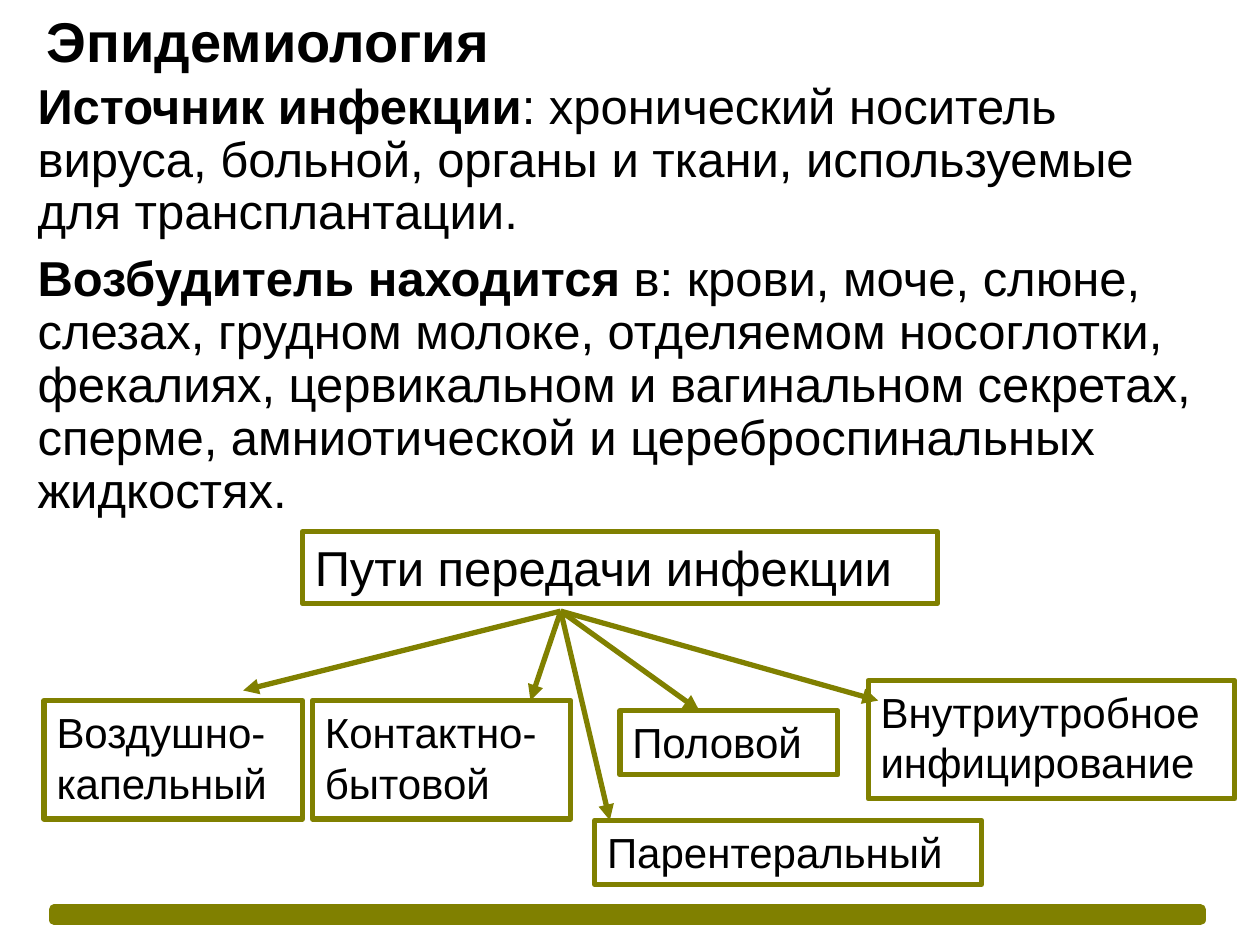
from lxml.etree import SubElement
from pptx import Presentation
from pptx.dml.color import RGBColor
from pptx.enum.shapes import MSO_CONNECTOR, MSO_SHAPE
from pptx.enum.text import MSO_ANCHOR, PP_ALIGN
from pptx.oxml.ns import qn
from pptx.util import Inches, Pt

COLORS = {"olive": "808000", "text": "000000", "background": "FFFFFF"}
FONT = "Arial"

BODY = [
    ("Источник инфекции",
     ": хронический носитель вируса, больной, органы и ткани, "
     "используемые для трансплантации."),
    ("Возбудитель находится",
     " в: крови, моче, слюне, слезах, грудном молоке, отделяемом "
     "носоглотки, фекалиях, цервикальном и вагинальном секретах, "
     "сперме, амниотической и цереброспинальных жидкостях."),
]

# Transmission route: text, box (left, top, width, height), arrow tip
ROUTES = [
    ("Воздушно-капельный", (0.35, 5.56, 2.05, 0.94), (1.93, 5.48)),
    ("Контактно-бытовой", (2.48, 5.56, 2.05, 0.94), (4.21, 5.56)),
    ("Парентеральный", (4.72, 6.51, 3.07, 0.51), (4.84, 6.51)),
    ("Половой", (4.92, 5.64, 1.73, 0.51), (5.55, 5.64)),
    ("Внутриутробное инфицирование", (6.89, 5.4, 2.91, 0.94), (6.97, 5.56)),
]
ARROW_START = (4.45, 4.85)


def color(name):
    return RGBColor.from_string(COLORS[name])


def inches(values):
    return [Inches(value) for value in values]


def format_run(run, size, bold=False):
    run.font.name = FONT
    run.font.size = Pt(size)
    run.font.bold = bold
    run.font.color.rgb = color("text")


def prepare_frame(frame):
    frame.word_wrap = True
    frame.vertical_anchor = MSO_ANCHOR.TOP


def add_title(slide, text, place):
    title = slide.shapes.title
    title.left, title.top, title.width, title.height = inches(place)
    frame = title.text_frame
    frame.text = text
    prepare_frame(frame)
    frame.paragraphs[0].alignment = PP_ALIGN.LEFT
    format_run(frame.paragraphs[0].runs[0], 32, bold=True)


def add_body(slide, paragraphs, place):
    frame = slide.shapes.add_textbox(*inches(place)).text_frame
    prepare_frame(frame)
    for index, (lead, details) in enumerate(paragraphs):
        paragraph = frame.add_paragraph() if index else frame.paragraphs[0]
        paragraph.line_spacing = 0.9
        paragraph.space_before = Pt(8 if index else 0)
        for text, bold in ((lead, True), (details, False)):
            run = paragraph.add_run()
            run.text = text
            format_run(run, 28, bold)


def add_rectangle(slide, place, line_width):
    rectangle = slide.shapes.add_shape(MSO_SHAPE.RECTANGLE, *inches(place))
    rectangle.shadow.inherit = False
    rectangle.fill.background()
    rectangle.line.color.rgb = color("olive")
    rectangle.line.width = Pt(line_width)
    return rectangle


def add_box(slide, text, place, size):
    frame = add_rectangle(slide, place, 3).text_frame
    frame.text = text
    prepare_frame(frame)
    frame.paragraphs[0].alignment = PP_ALIGN.LEFT
    format_run(frame.paragraphs[0].runs[0], size)


def add_arrow(slide, start, tip):
    arrow = slide.shapes.add_connector(
        MSO_CONNECTOR.STRAIGHT, *inches(start + tip))
    arrow.line.color.rgb = color("olive")
    arrow.line.width = Pt(3)
    SubElement(arrow.line._get_or_add_ln(), qn("a:tailEnd"), type="triangle")
    SubElement(arrow._element.spPr, qn("a:effectLst"))


def main():
    presentation = Presentation()
    presentation.slide_width = Inches(10)
    presentation.slide_height = Inches(7.5)
    slide = presentation.slides.add_slide(presentation.slide_layouts[5])
    slide.background.fill.solid()
    slide.background.fill.fore_color.rgb = color("background")

    # Bottom bar
    bottom_bar = add_rectangle(slide, (0.43, 7.22, 9.1, 0.08), 6)
    bottom_bar.fill.solid()
    bottom_bar.fill.fore_color.rgb = color("olive")

    # Heading and description
    add_title(slide, "Эпидемиология", (0.27, 0, 3.98, 0.63))
    add_body(slide, BODY, (0.2, 0.6, 9.53, 3.64))

    # Transmission routes, with the arrows above the boxes
    add_box(slide, "Пути передачи инфекции", (2.4, 4.22, 5.04, 0.57), 28)
    for route, place, _ in ROUTES:
        add_box(slide, route, place, 24)
    for _, _, tip in ROUTES:
        add_arrow(slide, ARROW_START, tip)

    presentation.save("out.pptx")


if __name__ == "__main__":
    main()
